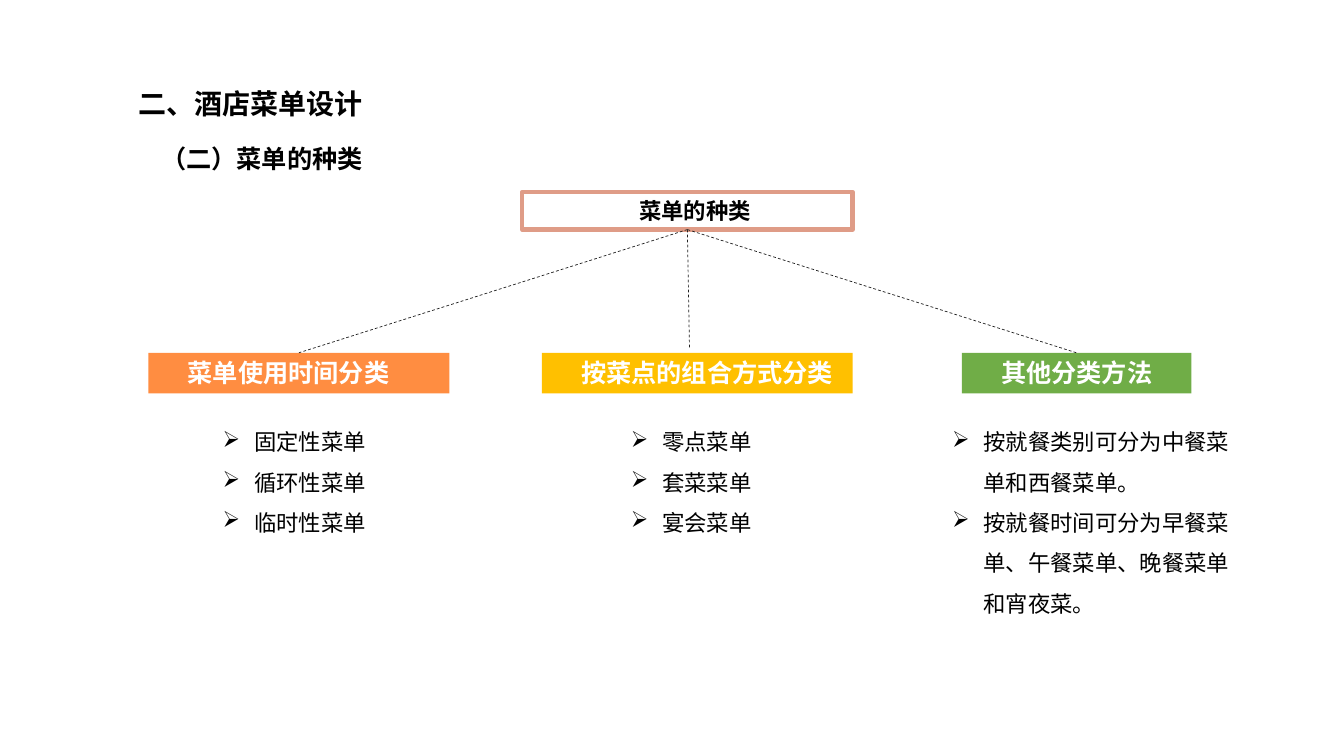
"""Build the slide on the kinds of hotel menus."""
from lxml.etree import SubElement
from pptx import Presentation
from pptx.dml.color import RGBColor
from pptx.enum.dml import MSO_LINE
from pptx.enum.shapes import MSO_CONNECTOR, MSO_SHAPE
from pptx.enum.text import MSO_ANCHOR, MSO_AUTO_SIZE, PP_ALIGN
from pptx.oxml.ns import qn
from pptx.util import Pt

FONT = "Noto Sans CJK SC"
BLACK = RGBColor(0x00, 0x00, 0x00)
WHITE = RGBColor(0xFF, 0xFF, 0xFF)
ORANGE = RGBColor(0xFF, 0x8D, 0x41)
AMBER = RGBColor(0xFF, 0xC0, 0x00)
GREEN = RGBColor(0x70, 0xAD, 0x47)
SALMON = RGBColor(0xDF, 0x9C, 0x87)
DARK = RGBColor(0x20, 0x20, 0x20)

HEAD_TOP, HEAD_HEIGHT, LIST_TOP = 252, 29, 293
BRANCHES = [
    ("菜单使用时间分类", ORANGE, 106, 215, 152, 117, 94, False,
     ["固定性菜单", "循环性菜单", "临时性菜单"]),
    ("按菜点的组合方式分类", AMBER, 387, 222, 443.5, 101, 124, False,
     ["零点菜单", "套菜菜单", "宴会菜单"]),
    ("其他分类方法", GREEN, 687, 164, 673, 215, 181, True,
     ["按就餐类别可分为中餐菜单和西餐菜单。",
      "按就餐时间可分为早餐菜单、午餐菜单、晚餐菜单和宵夜菜。"]),
]


def write(sp, lines, size, color=BLACK, bold=True, align=PP_ALIGN.LEFT, anchor=MSO_ANCHOR.TOP):
    tf = sp.text_frame
    tf.word_wrap = True
    tf.auto_size = MSO_AUTO_SIZE.NONE
    tf.vertical_anchor = anchor
    tf.text = "\n".join(lines)
    for p in tf.paragraphs:
        p.alignment = align
        font = p.runs[0].font
        font.name, font.size, font.bold = FONT, Pt(size), bold
        font.color.rgb = color
        SubElement(p.runs[0]._r.get_or_add_rPr(), qn("a:ea"), typeface=FONT)
    return tf


def add_box(left, top, width, height):
    sp = s.shapes.add_shape(MSO_SHAPE.RECTANGLE, Pt(left), Pt(top), Pt(width), Pt(height))
    sp.shadow.inherit = False
    return sp


prs = Presentation()
prs.slide_width, prs.slide_height = Pt(960), Pt(540)
s = prs.slides.add_slide(prs.slide_layouts[5])

title = s.shapes.title
title.left, title.top, title.width, title.height = Pt(91.5), Pt(58.5), Pt(420), Pt(31)
write(title, ["二、酒店菜单设计"], 20)

subtitle = s.shapes.add_textbox(Pt(108), Pt(98.5), Pt(356), Pt(29))
write(subtitle, ["（二）菜单的种类"], 18)

root = add_box(373, 137, 236, 27)
root.fill.background()
root.line.color.rgb = SALMON
root.line.width = Pt(3)
tf = write(root, ["菜单的种类"], 16, align=PP_ALIGN.CENTER, anchor=MSO_ANCHOR.MIDDLE)
tf.margin_left = Pt(18)

for name, color, left, width, list_left, list_width, list_height, wrap, items in BRANCHES:
    head = add_box(left, HEAD_TOP, width, HEAD_HEIGHT)
    head.fill.solid()
    head.fill.fore_color.rgb = color
    head.line.fill.background()
    tf = write(head, [name], 18, WHITE)
    tf.paragraphs[0]._p.get_or_add_pPr().set("indent", str(Pt(21)))

    line = s.shapes.add_connector(MSO_CONNECTOR.STRAIGHT, Pt(491), Pt(164), Pt(492.5), Pt(248.5))
    line.begin_connect(root, 2)
    if color != AMBER:
        line.end_connect(head, 0)
    line.line.color.rgb = DARK
    line.line.width = Pt(0.5)
    line.line.dash_style = MSO_LINE.DASH
    SubElement(line._element.spPr, qn("a:effectLst"))

    kinds = s.shapes.add_textbox(Pt(list_left), Pt(LIST_TOP), Pt(list_width), Pt(list_height))
    tf = write(kinds, items, 16, bold=False)
    tf.word_wrap = wrap
    for p in tf.paragraphs:
        p.line_spacing = 1.5
        pPr = p._p.get_or_add_pPr()
        pPr.set("marL", str(Pt(22.5)))
        pPr.set("indent", str(Pt(-22.5)))
        SubElement(pPr, qn("a:buChar"), char="➢")

prs.save("out.pptx")
